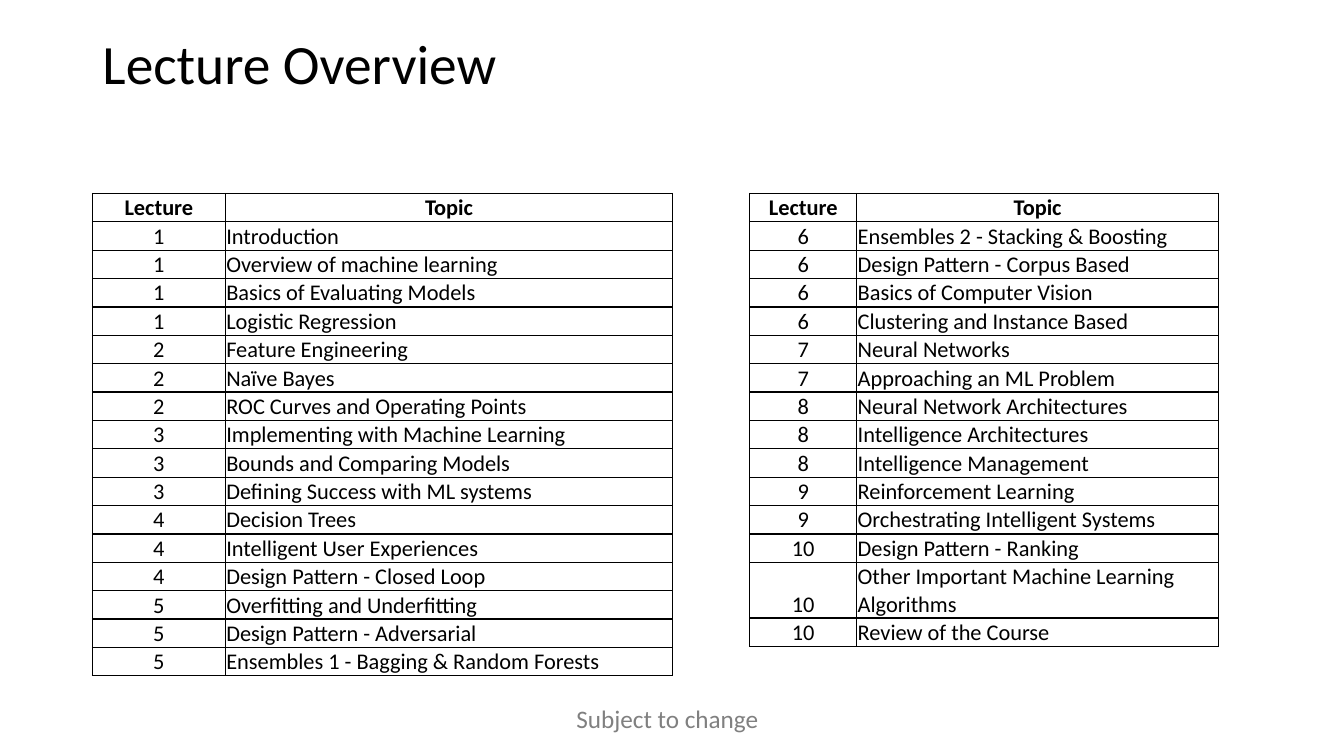
from lxml import etree
from pptx import Presentation
from pptx.dml.color import RGBColor
from pptx.enum import text as t
from pptx.oxml import ns
from pptx.util import Pt

HUES = {"ink": "000000", "note": "808080"}
FONT = "Calibri"


def add_run(para, words, size, hue="ink", bold=False):
    run = para.add_run()
    run.text = words
    run.font.name = FONT
    run.font.size = Pt(size)
    run.font.bold = bold
    run.font.color.rgb = RGBColor.from_string(HUES[hue])


def add_edges(cell):
    props = cell._tc.get_or_add_tcPr()
    for side in ("lnL", "lnR", "lnT", "lnB"):
        line = etree.SubElement(props, ns.qn("a:" + side), w=str(Pt(1)))
        fill = etree.SubElement(line, ns.qn("a:solidFill"))
        etree.SubElement(fill, ns.qn("a:srgbClr"), val=HUES["ink"])


# Topics by lecture number
first = {
    1: ["Introduction", "Overview of machine learning",
        "Basics of Evaluating Models", "Logistic Regression"],
    2: ["Feature Engineering", "Naïve Bayes",
        "ROC Curves and Operating Points"],
    3: ["Implementing with Machine Learning", "Bounds and Comparing Models",
        "Defining Success with ML systems"],
    4: ["Decision Trees", "Intelligent User Experiences",
        "Design Pattern - Closed Loop"],
    5: ["Overfitting and Underfitting", "Design Pattern - Adversarial",
        "Ensembles 1 - Bagging & Random Forests"],
}
second = {
    6: ["Ensembles 2 - Stacking & Boosting", "Design Pattern - Corpus Based",
        "Basics of Computer Vision", "Clustering and Instance Based"],
    7: ["Neural Networks", "Approaching an ML Problem"],
    8: ["Neural Network Architectures", "Intelligence Architectures",
        "Intelligence Management"],
    9: ["Reinforcement Learning", "Orchestrating Intelligent Systems"],
    10: ["Design Pattern - Ranking",
         "Other Important Machine Learning Algorithms",
         "Review of the Course"],
}

deck = Presentation()
deck.slide_width, deck.slide_height = Pt(960), Pt(540)
slide = deck.slides.add_slide(deck.slide_layouts[5])

# Title
title = slide.shapes.title
title.left, title.top, title.width, title.height = Pt(66), Pt(28.8), Pt(828), Pt(37.5)
frame = title.text_frame
frame.auto_size = t.MSO_AUTO_SIZE.NONE
frame.vertical_anchor = t.MSO_ANCHOR.MIDDLE
para = frame.paragraphs[0]
para.alignment = t.PP_ALIGN.LEFT
para.line_spacing = 0.9
add_run(para, "Lecture Overview", 39.6)

# Lecture tables
for left, widths, plan in ((535.5, (76.5, 258.5), second),
                           (66, (95, 319.5), first)):
    rows = [("Lecture", "Topic")]
    rows += [(str(num), topic) for num, topics in plan.items() for topic in topics]
    grid = slide.shapes.add_table(len(rows), 2, Pt(left), Pt(138.2),
                                  Pt(sum(widths)), Pt(20 * len(rows))).table
    grid.first_row = grid.horz_banding = False
    for col, width in zip(grid.columns, widths):
        col.width = Pt(width)
    for r, row in enumerate(rows):
        for c, words in enumerate(row):
            cell = grid.cell(r, c)
            add_edges(cell)
            cell.fill.background()
            cell.vertical_anchor = t.MSO_ANCHOR.BOTTOM
            cell.margin_left = cell.margin_right = cell.margin_top = Pt(0.7)
            cell.margin_bottom = 0
            para = cell.text_frame.paragraphs[0]
            centred = r == 0 or c == 0
            para.alignment = t.PP_ALIGN.CENTER if centred else t.PP_ALIGN.LEFT
            add_run(para, words, 16, bold=r == 0)

# Note at the foot
note = slide.shapes.add_textbox(Pt(404.6), Pt(499), Pt(150.5), Pt(29)).text_frame
note.word_wrap = False
note.auto_size = t.MSO_AUTO_SIZE.SHAPE_TO_FIT_TEXT
add_run(note.paragraphs[0], "Subject to change", 18, "note")

deck.save("out.pptx")
